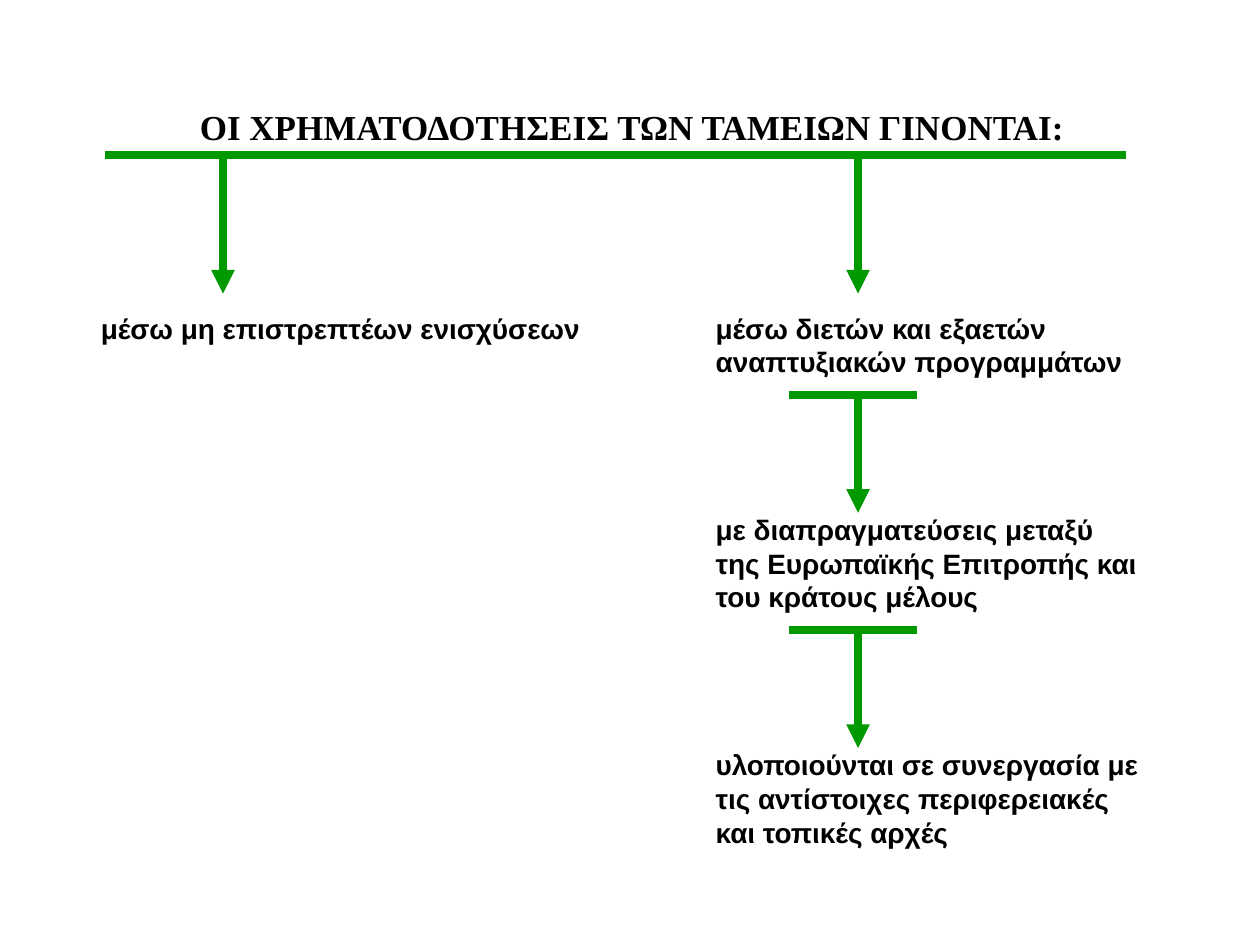
"""Build the slide on how the funds are financed, as a two-branch flow."""
from pptx import Presentation
from pptx.dml.color import RGBColor
from pptx.enum.shapes import MSO_CONNECTOR
from pptx.enum.text import MSO_ANCHOR, MSO_AUTO_SIZE, PP_ALIGN
from pptx.oxml.ns import qn
from pptx.util import Inches, Pt

STRAIGHT = MSO_CONNECTOR.STRAIGHT
TOP = MSO_ANCHOR.TOP
FIXED = MSO_AUTO_SIZE.NONE
LEFT, CENTER = PP_ALIGN.LEFT, PP_ALIGN.CENTER

TITLE = "ΟΙ ΧΡΗΜΑΤΟΔΟΤΗΣΕΙΣ ΤΩΝ ΤΑΜΕΙΩΝ ΓΙΝΟΝΤΑΙ:"
BRANCHES = [
    {"left": 0.8, "arrow": 1.77, "steps": [(0, ["μέσω μη επιστρεπτέων ενισχύσεων"])]},
    {"left": 5.68, "arrow": 6.81, "steps": [
        (0, ["μέσω διετών και εξαετών", "αναπτυξιακών προγραμμάτων"]),
        (6, ["με διαπραγματεύσεις μεταξύ", "της Ευρωπαϊκής Επιτροπής και",
             "του κράτους μέλους"]),
        (13, ["υλοποιούνται σε συνεργασία με", "τις αντίστοιχες περιφερειακές",
              "και τοπικές αρχές"]),
    ]},
]

THEME = {
    "green": RGBColor(0x00, 0x99, 0x00),
    "black": RGBColor(0x00, 0x00, 0x00),
    "title": ("Times New Roman", 20),
    "body": ("Arial", 16),
    "line": 4.5,
    "pitch": 19.2,
}
WIDTH, HEIGHT = 10, 7.5
ROW = THEME["pitch"] / 72
FIRST_ROW = 2.47
TEXT_WIDTH = 4.1
RULE = (0.83, 8.94, 1.23)
BAR_LEFT, BAR_RIGHT = 0.55, 0.47
BAR_GAP, ENTRY_GAP = 0.13, 0.14


def write(shape, text, style, align, spacing=None):
    """Fill a text shape, one paragraph per line of text."""
    frame = shape.text_frame
    frame.text = text
    layout = {"word_wrap": True, "auto_size": FIXED, "vertical_anchor": TOP,
              "margin_left": 0, "margin_right": 0, "margin_top": 0, "margin_bottom": 0}
    for name, value in layout.items():
        setattr(frame, name, value)
    family, size = THEME[style]
    for para in frame.paragraphs:
        para.alignment = align
        para.line_spacing = spacing
        for name, value in {"name": family, "size": Pt(size), "bold": True}.items():
            setattr(para.runs[0].font, name, value)
        para.runs[0].font.color.rgb = THEME["black"]


def draw_line(page, start, end, arrow=False):
    """Draw a green line, with a head at its end if it is an arrow."""
    line = page.shapes.add_connector(STRAIGHT, *map(Inches, start + end))
    line.line.color.rgb = THEME["green"]
    line.line.width = Pt(THEME["line"])
    properties = line._element.spPr
    if arrow:
        outline = properties.find(qn("a:ln"))
        head = outline.makeelement(qn("a:tailEnd"), {"type": "triangle"})
        outline.append(head)
    properties.append(properties.makeelement(qn("a:effectLst"), {}))


def draw_branch(page, branch):
    """Stack the steps of a branch, each entered by an arrow from the one above."""
    center = branch["arrow"]
    source = RULE[2]
    for row, lines in branch["steps"]:
        top = FIRST_ROW + row * ROW
        tip = top
        if row:
            draw_line(page, (center - BAR_LEFT, source), (center + BAR_RIGHT, source))
        else:
            tip -= ENTRY_GAP
        draw_line(page, (center, source), (center, tip), arrow=True)
        height = len(lines) * ROW
        box = page.shapes.add_textbox(
            *map(Inches, (branch["left"], top, TEXT_WIDTH, height)))
        write(box, "\n".join(lines), "body", LEFT, Pt(THEME["pitch"]))
        source = top + height + BAR_GAP


def main():
    """Assemble and save the deck."""
    deck = Presentation()
    deck.slide_width, deck.slide_height = Inches(WIDTH), Inches(HEIGHT)
    page = deck.slides.add_slide(deck.slide_layouts[5])
    title = page.shapes.title
    place = {"left": 0.83, "top": 0.84, "width": 8.37, "height": 0.32}
    for name, value in place.items():
        setattr(title, name, Inches(value))
    write(title, TITLE, "title", CENTER)
    left, right, level = RULE
    draw_line(page, (left, level), (right, level))
    for branch in BRANCHES:
        draw_branch(page, branch)
    deck.save("out.pptx")


if __name__ == "__main__":
    main()
